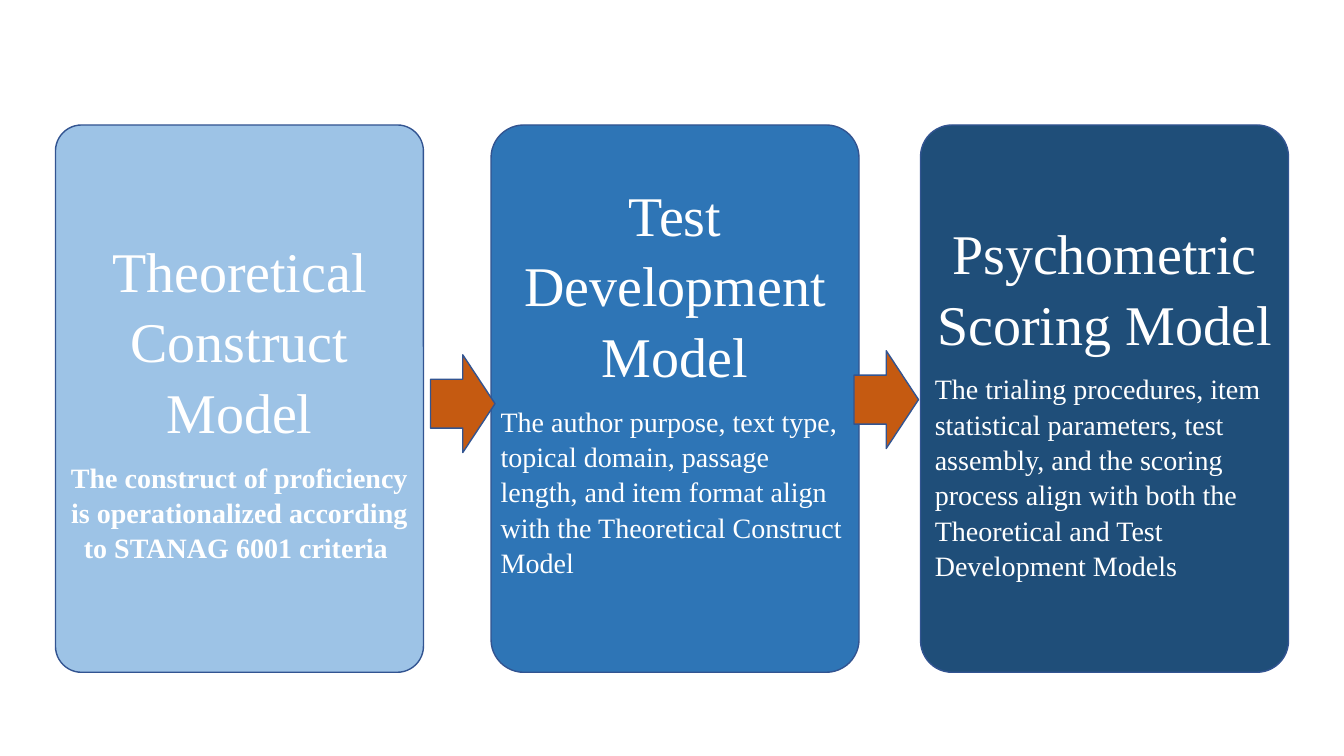
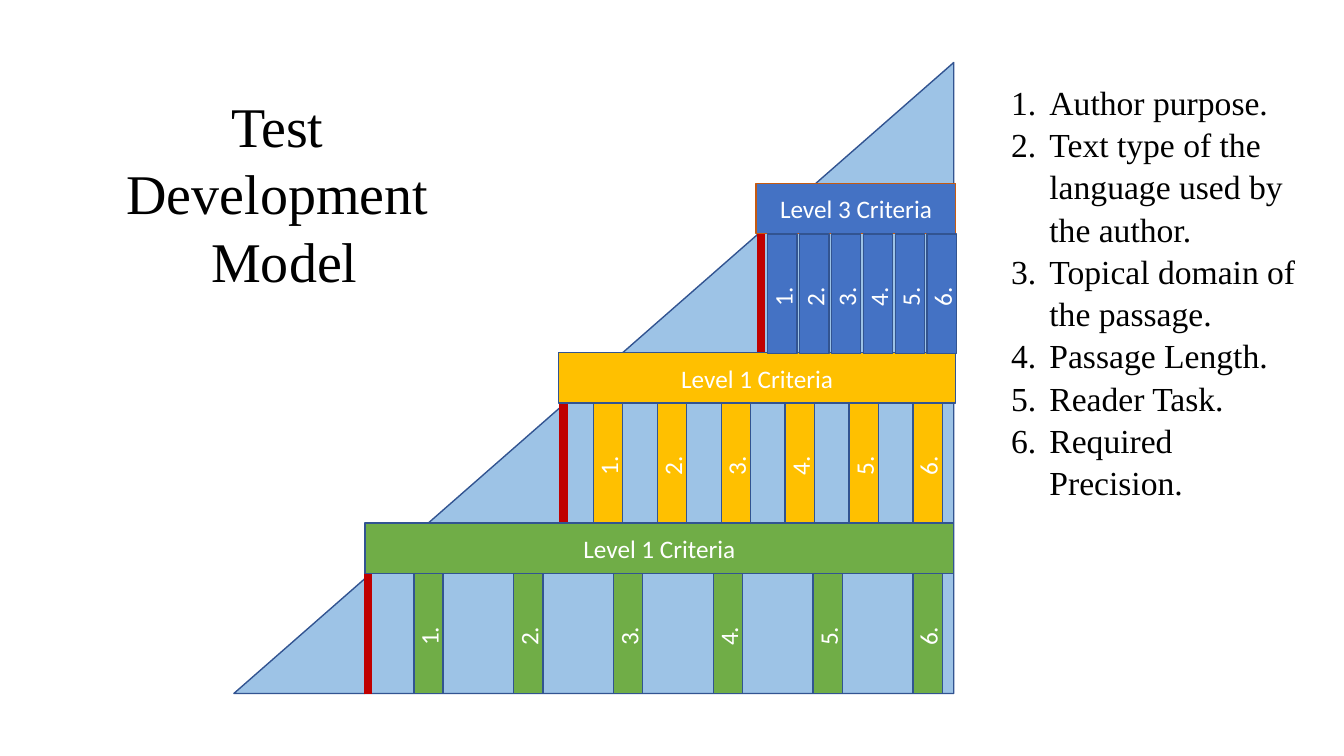
from pptx import Presentation
from pptx.dml.color import RGBColor
from pptx.enum import shapes, text
from pptx.oxml.ns import qn
from pptx.util import Inches, Pt

SERIF, SANS = "Times New Roman", "Calibri"
WHITE, BLACK, EDGE = "FFFFFF", "000000", "325491"
SKY, RED, RUST = "9DC3E6", "C00000", "C55A11"
KIND, ALIGN = shapes.MSO_SHAPE, text.PP_ALIGN
MID, LEFT = ALIGN.CENTER, ALIGN.LEFT

# Cards: left, corner, fill, heading, body, body align, bold, side and bottom inset
CARDS = [
    (0.55, 0.071, SKY, "Theoretical Construct Model",
     "The construct of proficiency is operationalized according to "
     "STANAG 6001 criteria ", MID, True, 0.05, 0.05),
    (4.87, 0.089, "2E75B6", "Test Development Model",
     "The author purpose, text type, topical domain, passage length, and "
     "item format align with the Theoretical Construct Model",
     LEFT, False, 0, 0.46),
    (9.13, 0.086, "1F4E79", "Psychometric Scoring Model",
     "The trialing procedures, item statistical parameters, test assembly, "
     "and the scoring process align with both the Theoretical and Test "
     "Development Models", LEFT, False, 0.05, 0.05),
]
ARROWS = [(4.27, 3.52), (8.47, 3.48)]

# Levels: label, left, top, width, fill, edge, post x, first and last pillar centre
LEVELS = [
    ("Level 1 Criteria", 3.62, 5.19, 5.84, "70AD47", EDGE, 3.65, 4.25, 9.2),
    ("Level 1 Criteria", 5.54, 3.5, 3.94, "FFC000", EDGE, 5.59, 6.03, 9.2),
    ("Level 3 Criteria", 7.5, 1.82, 1.98, "4472C4", RUST, 7.55, 7.76, 9.34),
]
TITLE = ["Test ", "Development ", "Model"]
FACTORS = [
    "Author purpose.",
    "Text type of the language used by the author.",
    "Topical domain of the passage.",
    "Passage Length.",
    "Reader Task.",
    "Required Precision.",
]


def rgb(code):
    return RGBColor.from_string(code)


def place(item, x, y, w, h):
    item.left, item.top, item.width, item.height = map(Inches, (x, y, w, h))


def shape(slide, kind, box, fill, edge=EDGE):
    item = slide.shapes.add_shape(kind, *map(Inches, box))
    item.shadow.inherit = False
    item.fill.solid()
    item.fill.fore_color.rgb = rgb(fill)
    item.line.color.rgb = rgb(edge)
    item.line.width = Pt(1)
    return item


def write(frame, lines, size, font, color, align=MID, bold=False, space=1, after=0):
    """Append paragraphs, filling the first one while it is empty."""
    for line in lines:
        para = frame.paragraphs[-1]
        if para.runs:
            para = frame.add_paragraph()
        para.alignment, para.line_spacing = align, space
        para.space_before, para.space_after = Pt(0), Pt(after)
        run = para.add_run()
        run.text = line
        run.font.size, run.font.name, run.font.bold = Pt(size), font, bold
        run.font.color.rgb = rgb(color)


def label(item, line):
    item.text_frame.vertical_anchor = text.MSO_ANCHOR.MIDDLE
    write(item.text_frame, [line], 18, SANS, WHITE)


def post(slide, x, top, bottom):
    line = slide.shapes.add_connector(
        shapes.MSO_CONNECTOR.STRAIGHT, *map(Inches, (x, bottom, x, top)))
    line.line.color.rgb = rgb(RED)
    line.line.width = Pt(6)
    props = line._element.spPr
    props.append(props.makeelement(qn("a:effectLst"), {}))


def number(para):
    props = para._p.get_or_add_pPr()
    props.set("marL", str(Inches(0.38)))
    props.set("indent", str(-Inches(0.38)))
    props.append(props.makeelement(qn("a:buAutoNum"), {"type": "arabicPeriod"}))


def models(deck):
    slide = deck.slides.add_slide(deck.slide_layouts[6])
    for x, corner, fill, head, body, align, bold, side, base in CARDS:
        card = shape(slide, KIND.ROUNDED_RECTANGLE, (x, 1.24, 3.65, 5.43), fill)
        card.adjustments[0] = corner
        frame = card.text_frame
        frame.word_wrap = True
        frame.vertical_anchor = text.MSO_ANCHOR.MIDDLE
        frame.margin_left = frame.margin_right = Inches(side)
        frame.margin_top, frame.margin_bottom = Inches(0.05), Inches(base)
        write(frame, [head], 40, SERIF, WHITE, space=1.05, after=10)
        write(frame, [body], 20, SERIF, WHITE, align, bold, 1.05, 10)
    for x, y in ARROWS:
        shape(slide, KIND.RIGHT_ARROW, (x, y, 0.64, 0.97), RUST)


def levels(deck):
    slide = deck.slides.add_slide(deck.slide_layouts[5])

    # Title
    title = slide.shapes.title
    place(title, 1.14, 0.86, 3.36, 2.12)
    frame = title.text_frame
    frame.word_wrap = False
    frame.auto_size = text.MSO_AUTO_SIZE.NONE
    frame.vertical_anchor = text.MSO_ANCHOR.TOP
    write(frame, TITLE, 40, SERIF, BLACK)

    # Slope with its posts, then bars over them
    slope = shape(slide, KIND.ISOSCELES_TRIANGLE, (2.32, 0.62, 7.14, 6.26), SKY)
    slope.adjustments[0] = 1
    for _, _, top, _, _, _, x, _, _ in LEVELS:
        post(slide, x, top + 0.04, top + 1.7)
    for name, x, top, wide, fill, edge, _, _, _ in LEVELS:
        label(shape(slide, KIND.RECTANGLE, (x, top, wide, 0.5), fill, edge), name)

    # Evenly spaced pillars, one per factor
    long, thick = 1.19, 0.29
    for _, _, top, _, fill, _, _, first, last in LEVELS:
        step = (last - first) / (len(FACTORS) - 1)
        for i in range(len(FACTORS)):
            box = (first + i * step - long / 2, top + 0.95, long, thick)
            pillar = shape(slide, KIND.RECTANGLE, box, fill)
            pillar.rotation = 270
            label(pillar, f"{i + 1}. ")

    # Numbered factors
    notes = slide.shapes.add_textbox(*map(Inches, (9.93, 0.74, 3.12, 4.31)))
    notes.text_frame.word_wrap = True
    write(notes.text_frame, FACTORS, 24, SERIF, BLACK, LEFT, space=1.05)
    for para in notes.text_frame.paragraphs:
        number(para)


def main():
    deck = Presentation()
    deck.slide_width, deck.slide_height = Inches(13.33), Inches(7.5)
    models(deck)
    levels(deck)
    deck.save("out.pptx")


if __name__ == "__main__":
    main()
